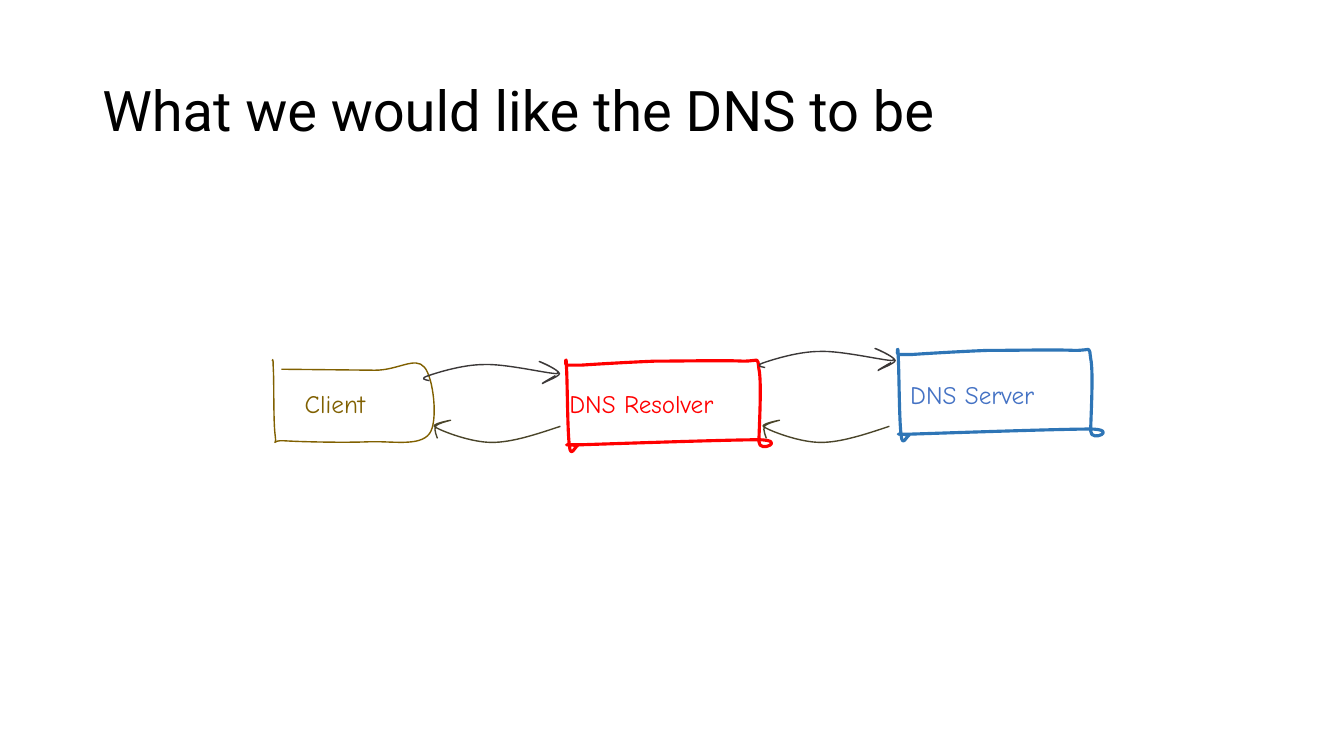
"""Build a slide with a hand-drawn chain of DNS client, resolver and server."""
from lxml.etree import SubElement
from pptx import Presentation
from pptx.dml.color import RGBColor
from pptx.enum.text import MSO_ANCHOR, MSO_AUTO_SIZE
from pptx.oxml.ns import qn
from pptx.util import Cm, Pt

COLORS = {
    "title": "000000",
    "client": "806000",
    "resolver": "FF0000",
    "server": "2E75B6",
    "server_text": "4472C4",
    "query": "3B3838",
    "answer": "4A452A",
}
SKETCH_UNIT = Cm(0.0254)

CLIENT_SIZE = (161, 82)
CLIENT_OUTLINE = [
    (9, 10), (102, 11),
    (125, 11, 142, -3, 151, 8), (160, 18, 165, 62, 156, 74),
    (146, 87, 119, 81, 95, 82), (71, 83, 28, 82, 12, 81),
    (-3, 80, 5, 88, 3, 76), (1, 63, 2, 20, 1, 8), (1, -4, 0, 2, 0, 2),
]
BOX_SIZE = (204, 91)
BOX_OUTLINE = [
    (15, 6),
    (30, 5, 63, 3, 89, 2), (116, 2, 159, 1, 176, 2),
    (194, 2, 190, -3, 192, 10), (195, 23, 192, 71, 192, 82),
    (192, 94, 221, 80, 191, 80), (162, 80, 45, 84, 15, 85),
    (-15, 85, 13, 85, 12, 86), (10, 86, 5, 99, 4, 86),
    (2, 73, 2, 20, 1, 7), (1, -7, -1, 6, 1, 6), (4, 6, 0, 6, 15, 6),
]
QUERY_SIZE = (135, 21)
QUERY_ARROW = [
    (6, 19),
    (1, 18, -4, 17, 5, 14), (14, 11, 39, 3, 60, 3),
    (81, 2, 123, 12, 132, 12), (141, 11, 115, 0, 115, 0),
    (116, 0, 134, 8, 135, 12), (135, 15, 118, 21, 118, 22),
    (117, 22, 124, 18, 131, 14),
]
ANSWER_SIZE = (126, 21)
ANSWER_ARROW = [
    (125, 6),
    (101, 14, 77, 22, 57, 22), (36, 22, 8, 11, 1, 7),
    (-6, 4, 16, 0, 16, 0), (16, 0, 3, 3, 1, 6),
    (-1, 9, 3, 18, 3, 18), (3, 18),
]


class SketchSlide:
    title_font = "Roboto"
    label_font = "Comic Neue"

    def __init__(self, presentation):
        self.slide = presentation.slides.add_slide(presentation.slide_layouts[6])

    def text(self, words, left, top, width, height, font, size, color):
        shape = self.slide.shapes.add_textbox(Cm(left), Cm(top), Cm(width), Cm(height))
        shape.text_frame.text = words
        run_font = shape.text_frame.paragraphs[0].runs[0].font
        run_font.name = font
        run_font.size = Pt(size)
        run_font.color.rgb = RGBColor.from_string(COLORS[color])
        return shape.text_frame

    def title(self, words):
        text_frame = self.text(words, 2.33, 1.02, 29.21, 3.68, self.title_font, 40, "title")
        text_frame.word_wrap = True
        text_frame.vertical_anchor = MSO_ANCHOR.MIDDLE
        text_frame.paragraphs[0].line_spacing = 0.9

    def label(self, words, left, top, width, color):
        text_frame = self.text(words, left, top, width, 1.02, self.label_font, 18, color)
        text_frame.word_wrap = False
        text_frame.auto_size = MSO_AUTO_SIZE.SHAPE_TO_FIT_TEXT

    def sketch(self, outline, size, left, top, color, line_width=1, close=False):
        builder = self.slide.shapes.build_freeform(0, 0, scale=SKETCH_UNIT)
        builder.add_line_segments([size], close=False)
        shape = builder.convert_to_shape(Cm(left), Cm(top))
        self.draw_outline(shape, outline, close)
        shape.shadow.inherit = False
        shape.fill.background()
        shape.line.color.rgb = RGBColor.from_string(COLORS[color])
        shape.line.width = Pt(line_width)

    def draw_outline(self, shape, outline, close):
        geometry = shape.element.xpath(".//a:path")[0]
        for command in list(geometry):
            geometry.remove(command)
        for index, numbers in enumerate(outline):
            straight = "a:lnTo" if index else "a:moveTo"
            tag = straight if len(numbers) == 2 else "a:cubicBezTo"
            command = SubElement(geometry, qn(tag))
            for x, y in zip(numbers[::2], numbers[1::2]):
                SubElement(command, qn("a:pt"), x=str(x), y=str(y))
        if close:
            SubElement(geometry, qn("a:close"))


def main():
    presentation = Presentation()
    presentation.slide_width = Cm(33.87)
    presentation.slide_height = Cm(19.05)
    page = SketchSlide(presentation)
    page.title("What we would like the DNS to be")

    page.sketch(CLIENT_OUTLINE, CLIENT_SIZE, 6.86, 9.05, "client")
    for left, top, color in ((14.25, 9.05, "resolver"), (22.61, 8.78, "server")):
        page.sketch(BOX_OUTLINE, BOX_SIZE, left, top, color, line_width=2.25, close=True)
    for left, top in ((10.67, 9.11), (19.13, 8.78)):
        page.sketch(QUERY_ARROW, QUERY_SIZE, left, top, "query")
    for left in (10.95, 19.24):
        page.sketch(ANSWER_ARROW, ANSWER_SIZE, left, 10.59, "answer")

    page.label("Client", 7.43, 9.66, 2.59, "client")
    page.label("DNS Resolver", 14.1, 9.66, 5.26, "resolver")
    page.label("DNS Server", 22.69, 9.43, 4.67, "server_text")
    presentation.save("out.pptx")


if __name__ == "__main__":
    main()
